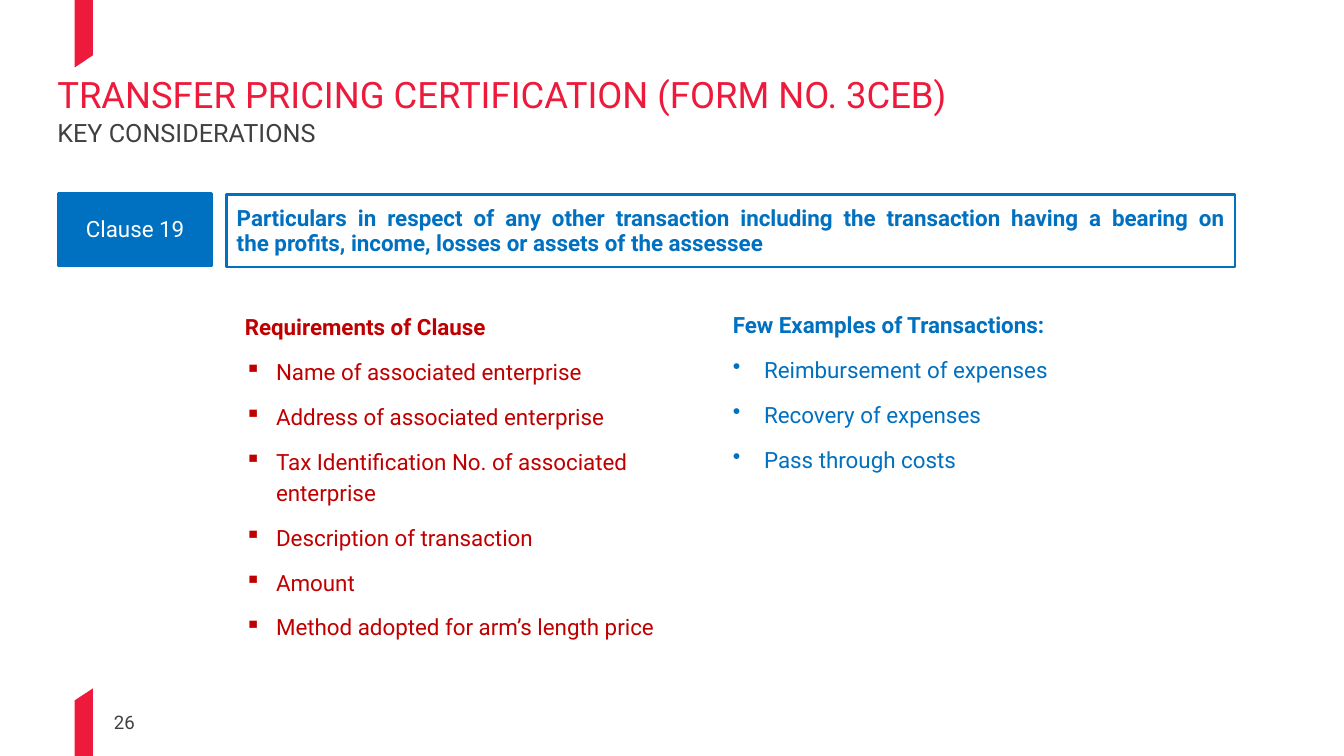
from lxml import etree
from pptx import Presentation
from pptx import util as u
from pptx.dml.color import RGBColor
from pptx.enum import shapes, text
from pptx.oxml.ns import qn

PX = 9144  # 100 px to the inch
FONT = "Roboto"
RED, BLUE, DARK = "ED1A3B", "0070C0", "404040"
WINE, WHITE = "C00000", "FFFFFF"
NBSP = chr(160)  # keeps two words on one line


def px(n):
    return u.Emu(n * PX)


def hue(code):
    return RGBColor.from_string(code)


def write(frame, words, size=16, color=DARK, bold=False, align=None,
          line=None, before=0, after=0, bullet=None, first=True):
    """Put one paragraph of formatted text into a frame."""
    para = frame.paragraphs[0] if first else frame.add_paragraph()
    if align is not None:
        para.alignment = align
    if line is not None:
        para.line_spacing = line
    para.space_before = u.Pt(before)
    para.space_after = u.Pt(after)
    if bullet:
        props = para._p.get_or_add_pPr()
        props.set("marL", str(31 * PX))
        props.set("indent", str(-31 * PX))
        etree.SubElement(props, qn("a:buChar")).set("char", bullet)
    run = para.add_run()
    run.text = words
    font = run.font
    font.name, font.size, font.bold = FONT, u.Pt(size), bold
    font.color.rgb = hue(color)


def frame(slide, box):
    body = slide.shapes.add_textbox(*map(px, box)).text_frame
    body.word_wrap = True
    return body


def flag(slide, left, edge, step):
    """Slanted bar from a slide edge; step is +1 downwards, -1 upwards."""
    right, short, long = left + 18, edge + 55 * step, edge + 67 * step
    ends = (long, short) if step > 0 else (short, long)
    path = slide.shapes.build_freeform(left, edge, scale=PX)
    path.add_line_segments(
        [(left, ends[0]), (right, ends[1]), (right, edge)], close=True)
    bar = path.convert_to_shape()
    bar.shadow.inherit = False
    bar.fill.solid()
    bar.fill.fore_color.rgb = hue(RED)
    bar.line.fill.background()


def footer(slide, box, number):
    body = frame(slide, box)
    body.margin_left = body.margin_right = 0
    body.margin_top = body.margin_bottom = 0
    body.vertical_anchor = text.MSO_ANCHOR.BOTTOM
    write(body, number, size=13.3)


def header(slide, box, title, sub):
    left, top, width, height = box
    write(frame(slide, box), title, size=26, color=RED, line=0.8)
    write(frame(slide, (left, top + 42, width, height - 11)), sub,
          size=18, line=0.8)


def panel(slide, box, words, fill=None, **style):
    shape = slide.shapes.add_shape(shapes.MSO_SHAPE.RECTANGLE, *map(px, box))
    shape.shadow.inherit = False
    if fill:
        shape.fill.solid()
        shape.fill.fore_color.rgb = hue(fill)
    else:
        shape.fill.background()
    shape.line.color.rgb = hue(BLUE)
    shape.line.width = u.Pt(2)
    body = shape.text_frame
    body.word_wrap = True
    body.vertical_anchor = text.MSO_ANCHOR.MIDDLE
    write(body, words, line=u.Pt(18), before=6, after=6, **style)


def clause(slide, box, label, words):
    left, top, width, height = box
    tab, gap = 152, 15
    panel(slide, (left + tab + gap, top + 1, width - tab - gap, height), words,
          color=BLUE, bold=True, align=text.PP_ALIGN.JUSTIFY)
    panel(slide, (left, top, tab, height), label, fill=BLUE,
          color=WHITE, align=text.PP_ALIGN.CENTER)


def column(slide, box, head, items, color, mark):
    body = frame(slide, box)
    style = dict(color=color, line=1.15, after=10)
    write(body, head, bold=True, **style)
    for item in items:
        write(body, item, bullet=mark, first=False, **style)


def main():
    deck = Presentation()
    deck.slide_width, deck.slide_height = px(1333), px(750)
    slide = deck.slides.add_slide(deck.slide_layouts[6])

    # Page frame
    flag(slide, 74, 750, -1)
    footer(slide, (113, 705, 61, 22), "26")
    flag(slide, 74, 0, 1)

    # Title and clause
    header(slide, (47, 75, 1241, 35),
           "TRANSFER PRICING CERTIFICATION (FORM NO. 3CEB)",
           "KEY CONSIDERATIONS")
    clause(slide, (58, 192, 1167, 72), "Clause 19",
           "Particulars in respect of any other transaction including the "
           f"transaction having a bearing on the{NBSP}profits, income, "
           "losses or assets of the assessee")

    # Two lists
    column(slide, (233, 302, 467, 339), "Requirements of Clause",
           ["Name of associated enterprise",
            "Address of associated enterprise",
            "Tax Identification No. of associated enterprise",
            "Description of transaction",
            "Amount",
            "Method adopted for arm’s length price"], WINE, "▪")
    column(slide, (717, 300, 400, 173), "Few Examples of Transactions:",
           ["Reimbursement of expenses",
            "Recovery of expenses",
            "Pass through costs"], BLUE, "•")

    deck.save("out.pptx")


if __name__ == "__main__":
    main()
